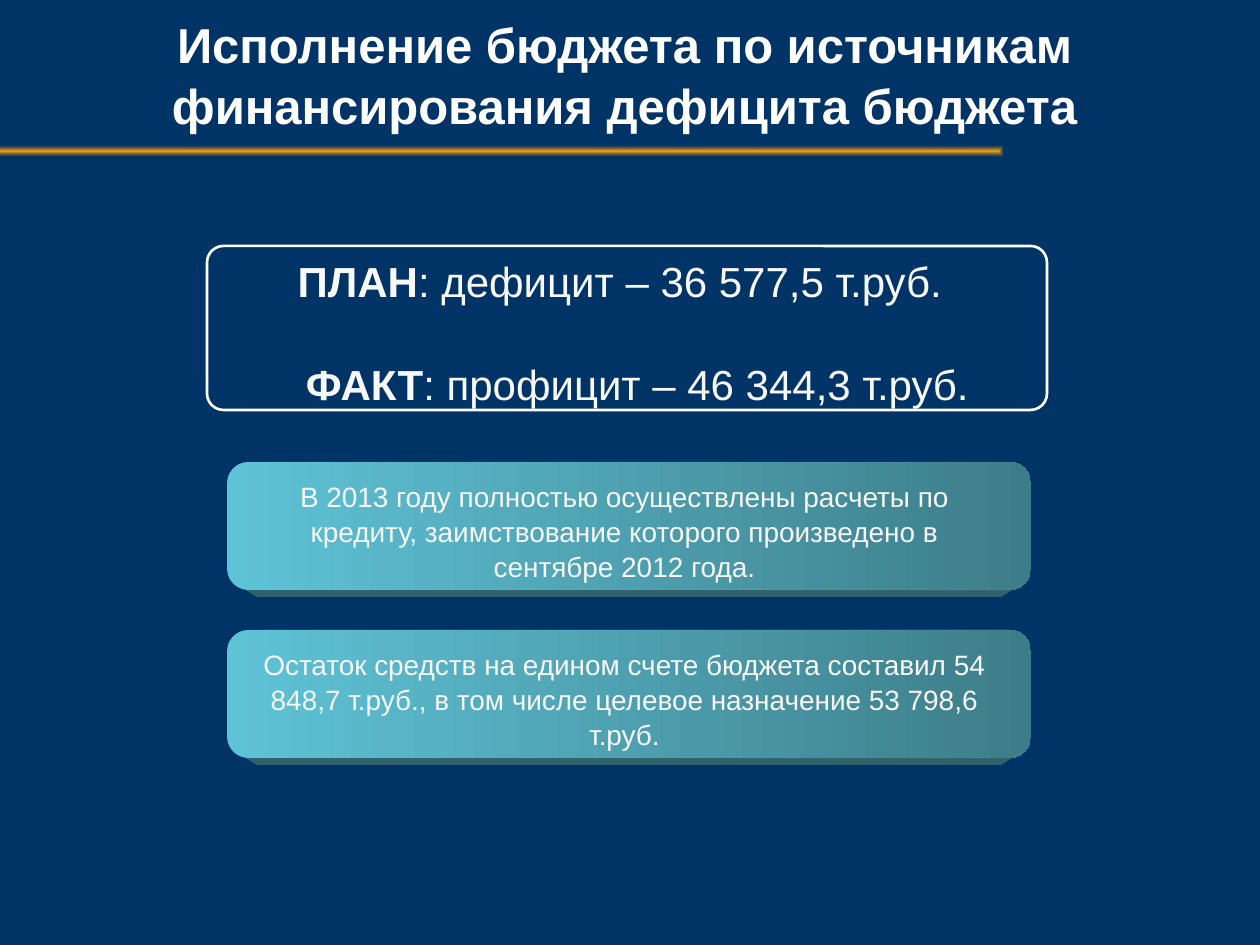
from lxml import etree
from pptx import Presentation
from pptx import util as u
from pptx.dml.color import RGBColor
from pptx.enum import shapes, text
from pptx.oxml import parse_xml
from pptx.oxml.ns import nsdecls, qn

PX = 914400 // 126
FONT = "Arial"
COLORS = {
    "back": "003366", "white": "FFFFFF", "text": "F8F8F8",
    "teal": "5FC3D7", "deep": "3D7D89", "base": "2F626C",
    "gold": "FAA712", "brown": "B3770D",
}
TITLE = "Исполнение бюджета по источникам финансирования дефицита бюджета"
RESULTS = [
    ("ПЛАН", ": дефицит – 36 577,5 т.руб."),
    ("ФАКТ", ": профицит – 46 344,3 т.руб."),
]
NOTES = [
    "В 2013 году полностью осуществлены расчеты по кредиту, "
    "заимствование которого произведено в сентябре 2012 года.",
    "Остаток средств на едином счете бюджета составил 54 848,7 т.руб., "
    "в том числе целевое назначение 53 798,6 т.руб.",
]
LEFT, TOP, WIDTH, HEIGHT, STEP = 227, 462, 804, 128, 168


def px(*nums):
    return [u.Emu(n * PX) for n in nums]


def rgb(name):
    return RGBColor.from_string(COLORS[name])


def style(item, size, color, bold=False):
    font = item.font
    font.name, font.size, font.bold = FONT, u.Pt(size), bold
    font.color.rgb = rgb(color)


def add_box(kind, *place):
    shape = slide.shapes.add_shape(kind, *px(*place))
    shape.shadow.inherit = False
    shape.line.fill.background()
    return shape


def add_text(*place):
    frame = slide.shapes.add_textbox(*px(*place)).text_frame
    frame.word_wrap = True
    return frame


def add_edge(x, y, width, alpha):
    """Draw a thin, partly transparent white line."""
    line = slide.shapes.add_connector(
        shapes.MSO_CONNECTOR.STRAIGHT, *px(x, y, x + width, y))
    line.line.width = u.Pt(0.25)
    line.line.color.rgb = rgb("white")
    props = line._element.spPr
    color = props.find(".//" + qn("a:srgbClr"))
    etree.SubElement(color, qn("a:alpha"), val=str(alpha * 1000))
    etree.SubElement(props, qn("a:effectLst"))


def add_rule():
    """Draw the gold bar that fades out at its edges."""
    bar = add_box(shapes.MSO_SHAPE.RECTANGLE, -4, 146, 1008, 11)
    bar.fill.background()
    fill = parse_xml(
        f'<a:gradFill {nsdecls("a")} rotWithShape="1"><a:gsLst>'
        f'<a:gs pos="0"><a:srgbClr val="{COLORS["gold"]}"/></a:gs>'
        f'<a:gs pos="100000"><a:srgbClr val="{COLORS["brown"]}">'
        '<a:alpha val="0"/></a:srgbClr></a:gs></a:gsLst>'
        '<a:path path="shape"><a:fillToRect l="50000" t="50000" '
        'r="50000" b="50000"/></a:path></a:gradFill>')
    props = bar._element.spPr
    props.replace(props.find(qn("a:noFill")), fill)


def add_card(top, note):
    end = top + HEIGHT
    path = slide.shapes.build_freeform(LEFT + 12, end - 4, PX)
    path.add_line_segments([(LEFT + WIDTH - 12, end - 4),
                            (LEFT + WIDTH - 30, end + 7),
                            (LEFT + 30, end + 7)])
    base = path.convert_to_shape()
    base.shadow.inherit = False
    base.fill.solid()
    base.fill.fore_color.rgb = rgb("base")
    base.line.fill.background()

    card = add_box(shapes.MSO_SHAPE.ROUNDED_RECTANGLE,
                   LEFT, top, WIDTH, HEIGHT)
    card.fill.gradient()
    card.fill.gradient_angle = 0
    for stop, name, spot in zip(card.fill.gradient_stops,
                                ("teal", "deep"), (0, 1)):
        stop.color.rgb, stop.position = rgb(name), spot
    add_edge(LEFT + 36, end, 746, 15)
    add_edge(LEFT + 37, top, 746, 25)

    para = add_text(LEFT + 9, top + 10, 777, 115).paragraphs[0]
    para.text = note
    para.alignment = text.PP_ALIGN.CENTER
    para.line_spacing = 1.04
    style(para.runs[0], 16, "text")


def add_results():
    frame = add_box(shapes.MSO_SHAPE.ROUNDED_RECTANGLE, 207, 246, 840, 164)
    frame.adjustments[0] = 0.1
    frame.fill.background()
    frame.line.color.rgb = rgb("white")
    frame.line.width = u.Pt(1.5)

    body = add_text(217, 249, 806, 160)
    for i, (label, value) in enumerate(RESULTS):
        para = body.add_paragraph() if i else body.paragraphs[0]
        para.alignment = text.PP_ALIGN.CENTER
        if i:
            para.space_before = u.Pt(30)
            para._p.get_or_add_pPr().set("marL", str(35 * PX))
        for part, bold in ((label, True), (value, False)):
            run = para.add_run()
            run.text = part
            style(run, 24, "text", bold)


deck = Presentation()
deck.slide_width, deck.slide_height = px(1260, 945)
slide = deck.slides.add_slide(deck.slide_layouts[5])
slide.background.fill.solid()
slide.background.fill.fore_color.rgb = rgb("back")
add_rule()

title = slide.shapes.title
title.left, title.top, title.width, title.height = px(29, 0, 1191, 147)
title.text_frame.text = TITLE
title.text_frame.vertical_anchor = text.MSO_ANCHOR.MIDDLE
head = title.text_frame.paragraphs[0]
head.alignment = text.PP_ALIGN.CENTER
head.line_spacing = 1.04
style(head.runs[0], 28, "white", True)

add_results()
for row, note in enumerate(NOTES):
    add_card(TOP + row * STEP, note)
deck.save("out.pptx")
